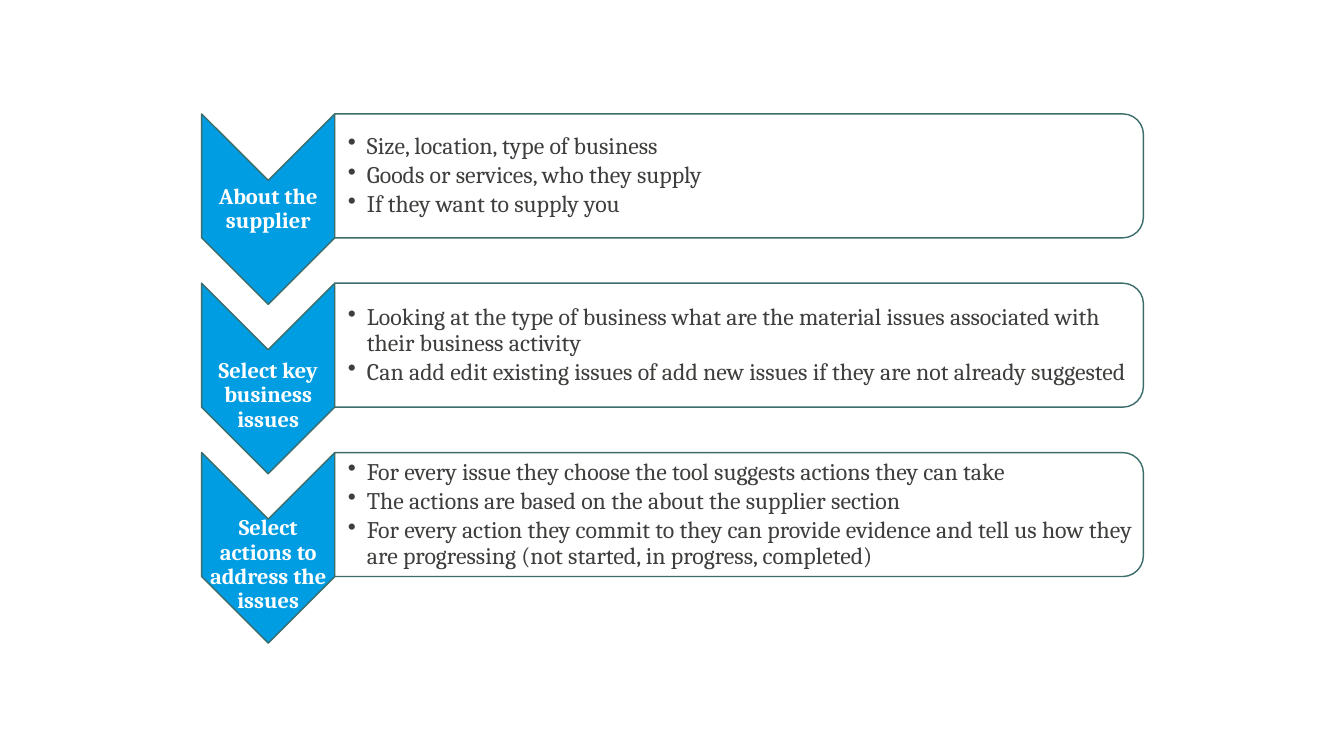
from dataclasses import dataclass

from lxml.etree import SubElement
from pptx import Presentation
from pptx.dml.color import RGBColor
from pptx.enum.shapes import MSO_SHAPE
from pptx.enum.text import MSO_ANCHOR, PP_ALIGN
from pptx.oxml.ns import qn
from pptx.util import Inches, Pt

STEPS = [
    ("About the supplier", 0, [
        "Size, location, type of business",
        "Goods or services, who they supply",
        "If they want to supply you",
    ]),
    ("Select key business issues", 0.17, [
        "Looking at the type of business what are the material issues "
        "associated with their business activity",
        "Can add edit existing issues of add new issues if they are not "
        "already suggested",
    ]),
    ("Select actions to address the issues", 0.17, [
        "For every issue they choose the tool suggests actions they can take",
        "The actions are based on the about the supplier section",
        "For every action they commit to they can provide evidence and tell us "
        "how they are progressing (not started, in progress, completed)",
    ]),
]


@dataclass(frozen=True)
class Theme:
    font: str = "Cambria"
    blue: str = "009DE2"
    outline: str = "3B6D6A"
    white: str = "FFFFFF"
    text: str = "3E3E3C"
    label_size: float = 16
    list_size: float = 17


THEME = Theme()
LEFT, TOP, STEP_PITCH = 2, 1.13, 1.68
CHEVRON_WIDTH, CHEVRON_HEIGHT = 1.32, 1.89
PANEL_WIDTH, PANEL_HEIGHT = 8.02, 1.23


def add_turned_shape(slide, kind, left, top, width, height, color, opacity=None):
    """Add a shape turned a quarter clockwise to fill the given visible area."""
    shape = slide.shapes.add_shape(
        kind, Inches(left + (width - height) / 2), Inches(top + (height - width) / 2),
        Inches(height), Inches(width))
    shape.rotation = 90
    shape.shadow.inherit = False
    shape.fill.solid()
    shape.fill.fore_color.rgb = RGBColor.from_string(color)
    if opacity is not None:
        rgb = shape.fill._xPr.find(qn("a:solidFill")).find(qn("a:srgbClr"))
        SubElement(rgb, qn("a:alpha"), val=str(opacity * 1000))
    shape.line.color.rgb = RGBColor.from_string(THEME.outline)
    shape.line.width = Pt(1)


def add_text(slide, lines, left, top, width, height, *, size, color, bold=False,
             align=PP_ALIGN.LEFT, inset=0.01, space_after=0, bullet=False):
    """Add a vertically centred text box with one paragraph per line."""
    box = slide.shapes.add_textbox(Inches(left), Inches(top), Inches(width), Inches(height))
    frame = box.text_frame
    frame.word_wrap = True
    frame.vertical_anchor = MSO_ANCHOR.MIDDLE
    frame.margin_left = Inches(inset)
    frame.margin_top = frame.margin_right = frame.margin_bottom = Inches(0.01)
    for index, line in enumerate(lines):
        paragraph = frame.paragraphs[0] if index == 0 else frame.add_paragraph()
        paragraph.alignment = align
        paragraph.line_spacing = 0.9
        paragraph.space_after = Pt(space_after)
        if bullet:
            properties = paragraph._p.get_or_add_pPr()
            properties.set("marL", str(Inches(0.19)))
            properties.set("indent", str(Inches(-0.19)))
            SubElement(properties, qn("a:buChar"), char="•")
        run = paragraph.add_run()
        run.text = line
        run.font.name = THEME.font
        run.font.size = Pt(size)
        run.font.bold = bold
        run.font.color.rgb = RGBColor.from_string(color)


def add_step(slide, top, label, label_drop, points):
    """Add one chevron with its label and its panel of points."""
    panel_left = LEFT + CHEVRON_WIDTH
    add_turned_shape(slide, MSO_SHAPE.CHEVRON, LEFT, top,
                     CHEVRON_WIDTH, CHEVRON_HEIGHT, THEME.blue)
    add_text(slide, [label], LEFT, top + CHEVRON_WIDTH / 2 + label_drop,
             CHEVRON_WIDTH, CHEVRON_HEIGHT - CHEVRON_WIDTH, size=THEME.label_size,
             color=THEME.white, bold=True, align=PP_ALIGN.CENTER, space_after=5.6)
    add_turned_shape(slide, MSO_SHAPE.ROUND_2_SAME_RECTANGLE, panel_left, top,
                     PANEL_WIDTH, PANEL_HEIGHT, THEME.white, opacity=90)
    add_text(slide, points, panel_left, top + 0.06, PANEL_WIDTH - 0.06,
             PANEL_HEIGHT - 0.12, size=THEME.list_size, color=THEME.text,
             inset=0.13, space_after=2.5, bullet=True)


def main():
    """Build and save the slide."""
    presentation = Presentation()
    presentation.slide_width = Inches(13.33)
    presentation.slide_height = Inches(7.5)
    slide = presentation.slides.add_slide(presentation.slide_layouts[6])
    for index, (label, label_drop, points) in enumerate(STEPS):
        add_step(slide, TOP + index * STEP_PITCH, label, label_drop, points)
    presentation.save("out.pptx")


if __name__ == "__main__":
    main()
